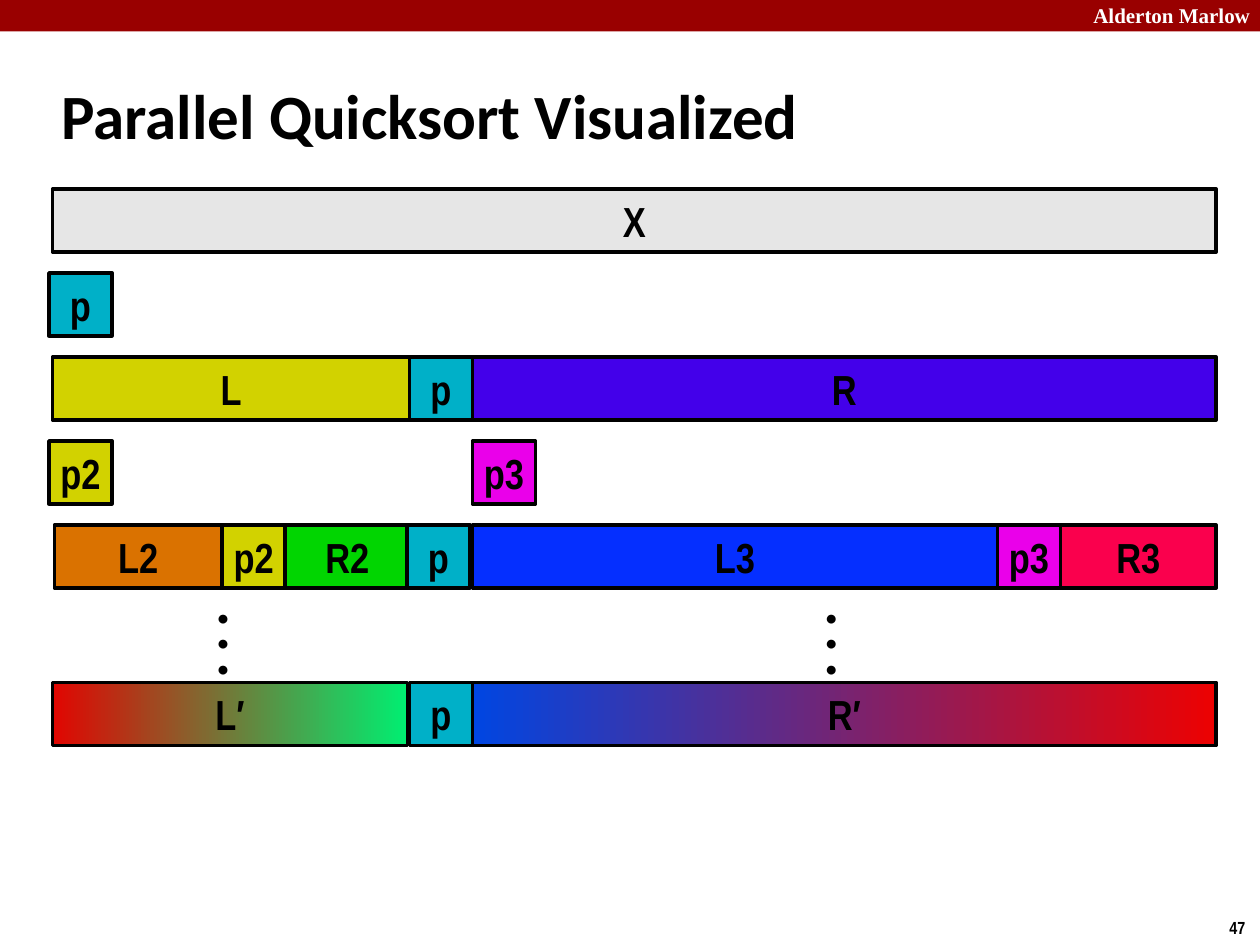
"""Build a slide that visualizes parallel quicksort as rows of blocks."""
from pptx import Presentation
from pptx import util as u
from pptx.dml.color import RGBColor
from pptx.enum import shapes, text

COLORS = {
    "black": "000000", "white": "FFFFFF", "banner": "990000",
    "X": "E6E6E6", "p": "00B0C8", "L": "D2D200", "R": "4300EA",
    "p2": "D2D200", "p3": "EA00EA", "L2": "DA7200", "R2": "01D501",
    "L3": "052FFF", "R3": "FA004D",
    "L′": ("E10601", "00EE71"), "R′": ("0046E2", "ED0101"),
}
BLOCK = 36
LEFT, MIDDLE, PIVOT, RIGHT = 30, 270, 234, 695
TOP, PITCH, LAST_TOP = 108, 48, 390
ROWS = [
    (0, LEFT, [("X", RIGHT - LEFT)]),
    (1, 28, [("p", BLOCK)]),
    (2, LEFT, [("L", PIVOT - LEFT), ("p", BLOCK), ("R", RIGHT - MIDDLE)]),
    (3, 28, [("p2", BLOCK)]),
    (3, MIDDLE, [("p3", BLOCK)]),
    (4, 31, [("L2", 96), ("p2", BLOCK), ("R2", 71)]),
    (4, MIDDLE, [("L3", 300), ("p3", BLOCK), ("R3", 89)]),
    (4, 232.5, [("p", BLOCK)]),
]


def rgb(value):
    """Turn a hex string into a colour."""
    return RGBColor.from_string(value)


def put_text(sp, content, size=24, font="Arial Narrow", color="black",
             align="LEFT", anchor="TOP", wrap=False):
    """Write bold text into a shape, one paragraph per line."""
    tf = sp.text_frame
    tf.word_wrap = wrap
    tf.vertical_anchor = text.MSO_ANCHOR[anchor]
    for i, line in enumerate(content.split("\n")):
        p = tf.paragraphs[0] if i == 0 else tf.add_paragraph()
        p.alignment = text.PP_ALIGN[align]
        r = p.add_run()
        r.text = line
        r.font.size, r.font.name, r.font.bold = u.Pt(size), font, True
        r.font.color.rgb = rgb(COLORS[color])


def add_label(s, content, left, top, width, height, **fmt):
    """Add a text box."""
    sp = s.shapes.add_textbox(u.Pt(left), u.Pt(top), u.Pt(width), u.Pt(height))
    put_text(sp, content, **fmt)


def add_rect(s, left, top, width, height, color):
    """Add a rectangle with a solid fill or a two-colour gradient."""
    sp = s.shapes.add_shape(shapes.MSO_SHAPE.RECTANGLE, u.Pt(left), u.Pt(top),
                            u.Pt(width), u.Pt(height))
    sp.shadow.inherit = False
    sp.line.fill.background()
    value = COLORS[color]
    if isinstance(value, tuple):
        sp.fill.gradient()
        sp.fill.gradient_angle = 0
        for stop, end, position in zip(sp.fill.gradient_stops, value, (0, 1)):
            stop.color.rgb = rgb(end)
            stop.position = position
    else:
        sp.fill.solid()
        sp.fill.fore_color.rgb = rgb(value)
    return sp


def add_row(s, top, left, blocks):
    """Place labelled blocks side by side, starting at left."""
    for name, width in blocks:
        sp = add_rect(s, left, top, width, BLOCK, name)
        sp.line.color.rgb = rgb(COLORS["black"])
        sp.line.width = u.Pt(2)
        put_text(sp, name, align="CENTER", anchor="MIDDLE")
        left += width


def main():
    """Build and save the slide."""
    prs = Presentation()
    prs.slide_width, prs.slide_height = u.Pt(720), u.Pt(540)
    s = prs.slides.add_slide(prs.slide_layouts[6])
    add_rect(s, 0, 0, 720, 18, "banner")
    add_label(s, "Alderton Marlow", 602, -2, 119.5, 22, size=12,
              font="Times New Roman", color="white", align="RIGHT", wrap=True)
    add_label(s, "47", 695.5, 520.5, 24.5, 19.5, size=10)
    add_label(s, "Parallel Quicksort Visualized", 28, 35.5, 598, 60, size=36,
              font="Calibri", anchor="MIDDLE", wrap=True)
    for index, left, blocks in ROWS:
        add_row(s, TOP + index * PITCH, left, blocks)
    for left in (117.5, 465):
        add_label(s, "•\n•\n•", left, 342, 20, 51, size=12, font="Calibri")
    add_row(s, LAST_TOP, LEFT, [("L′", 203)])
    add_row(s, LAST_TOP, MIDDLE, [("R′", RIGHT - MIDDLE)])
    add_row(s, LAST_TOP, PIVOT, [("p", BLOCK)])
    prs.save("out.pptx")


if __name__ == "__main__":
    main()
